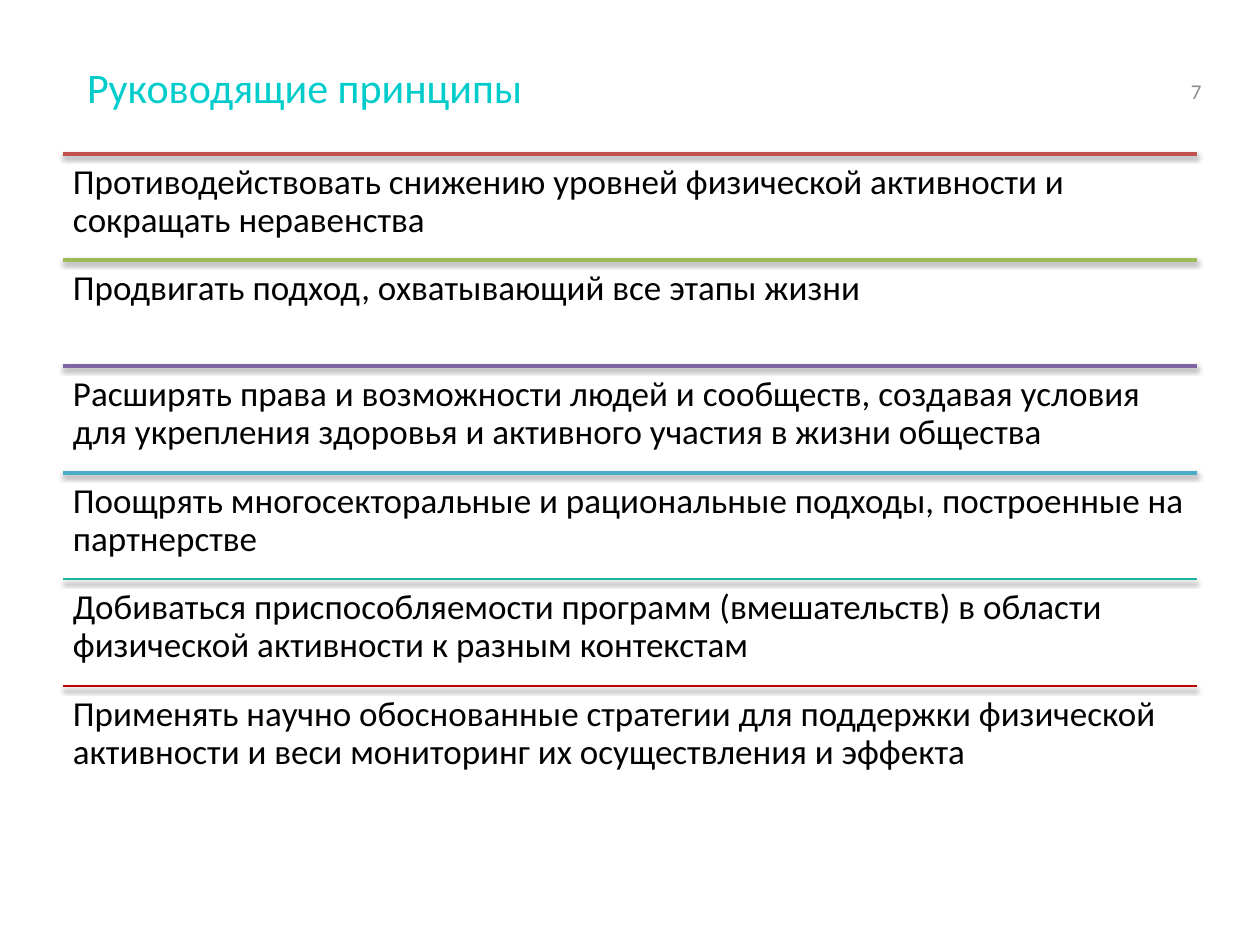
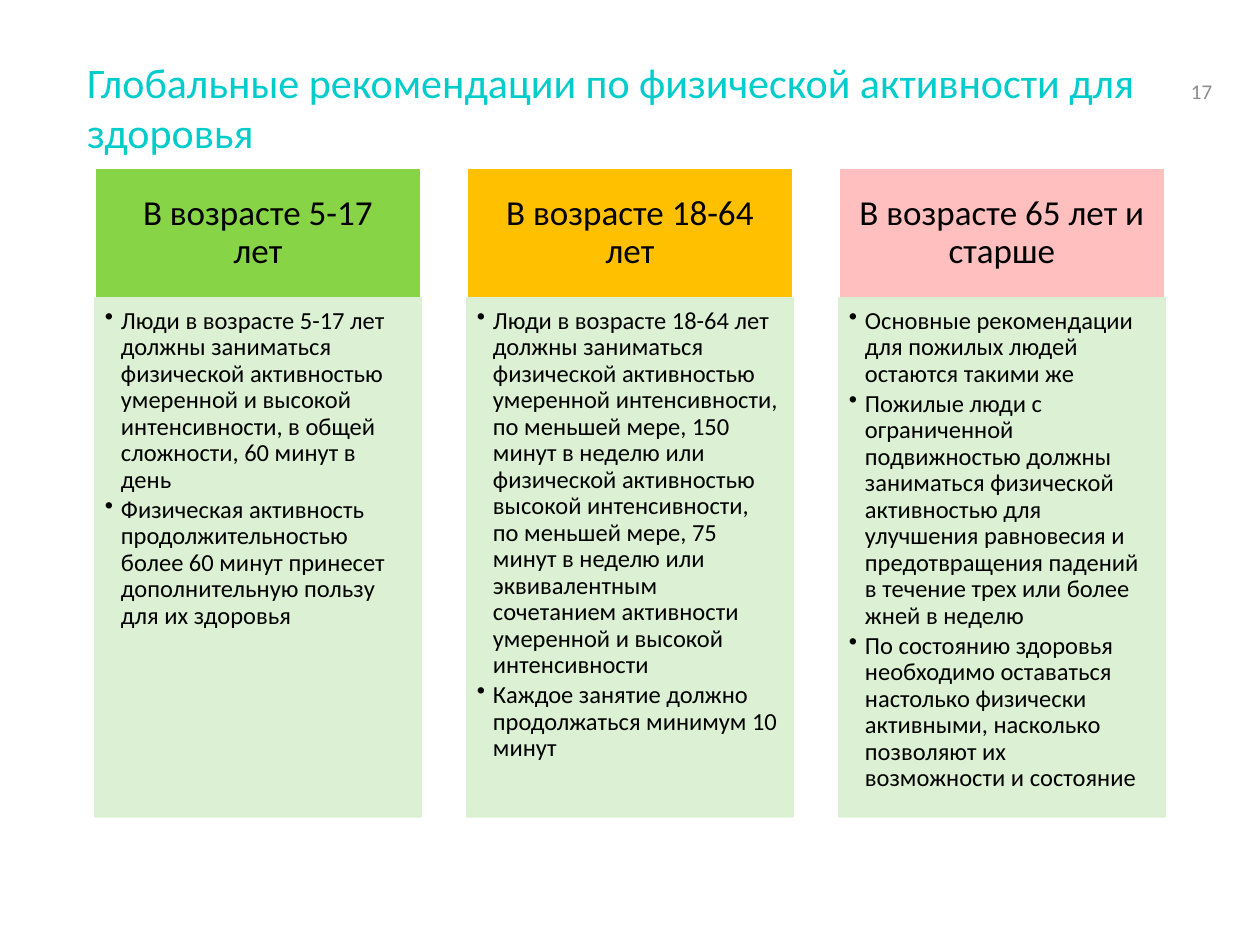
from lxml.etree import SubElement
from pptx import Presentation
from pptx.dml.color import RGBColor
from pptx.enum.shapes import MSO_CONNECTOR, MSO_SHAPE
from pptx.enum.text import MSO_ANCHOR, MSO_AUTO_SIZE, PP_ALIGN
from pptx.oxml.ns import qn
from pptx.util import Emu, Pt

COLORS = {
    "title": "00CCCC", "text": "000000", "number": "8C8C90", "white": "FFFFFF",
    "red": "C0504D", "olive": "9BBB59", "purple": "8064A2", "blue": "4BACC6",
    "teal": "1AB39F", "crimson": "C00000",
    "green": "87D447", "amber": "FFC000", "pink": "FFBFBF", "panel": "D9EFCF",
}
FONT = "Calibri"
PX = 914400 / 126
THICK = {"width": 2, "alpha": 38, "blur": 3.1, "dist": 1.6}
THIN = {"width": 1, "alpha": 50, "blur": 3, "dist": 2}

PRINCIPLES = [
    ("red", THICK, "Противодействовать снижению уровней физической активности и сокращать неравенства"),
    ("olive", THICK, "Продвигать подход, охватывающий все этапы жизни"),
    ("purple", THICK, "Расширять права и возможности людей и сообществ, создавая условия для укрепления "
                      "здоровья и активного участия в жизни общества"),
    ("blue", THICK, "Поощрять многосекторальные и рациональные подходы, построенные на партнерстве"),
    ("teal", THIN, "Добиваться приспособляемости программ (вмешательств) в области физической "
                   "активности к разным контекстам"),
    ("crimson", THIN, "Применять научно обоснованные стратегии для поддержки физической активности "
                      "и веси мониторинг их осуществления и эффекта"),
]

AGE_GROUPS = [
    ("green", "В возрасте 5-17 лет", [
        "Люди в возрасте 5-17 лет должны заниматься физической активностью умеренной и высокой "
        "интенсивности, в общей сложности, 60 минут в день",
        "Физическая активность продолжительностью более 60 минут принесет дополнительную пользу "
        "для их здоровья",
    ]),
    ("amber", "В возрасте 18-64 лет", [
        "Люди в возрасте 18-64 лет должны заниматься физической активностью умеренной "
        "интенсивности, по меньшей мере, 150 минут в неделю или физической активностью высокой "
        "интенсивности, по меньшей мере, 75 минут в неделю или эквивалентным сочетанием "
        "активности умеренной и высокой интенсивности",
        "Каждое занятие должно продолжаться минимум 10 минут",
    ]),
    ("pink", "В возрасте 65 лет и старше", [
        "Основные рекомендации для пожилых людей остаются такими же",
        "Пожилые люди с ограниченной подвижностью должны заниматься физической активностью для "
        "улучшения равновесия и предотвращения падений в течение трех или более жней в неделю",
        "По состоянию здоровья необходимо оставаться настолько физически активными, насколько "
        "позволяют их возможности и состояние",
    ]),
]


def px(n):
    return Emu(round(n * PX))


def rgb(name):
    return RGBColor.from_string(COLORS[name])


def write(sp, text, size=20, color="text", align=PP_ALIGN.LEFT, anchor=MSO_ANCHOR.TOP,
          insets=(10, 10, 10, 10), spacing=0.9, after=0, bullet=False):
    tf = sp.text_frame
    tf.word_wrap = True
    tf.auto_size = MSO_AUTO_SIZE.NONE
    tf.vertical_anchor = anchor
    tf.margin_left, tf.margin_top, tf.margin_right, tf.margin_bottom = map(px, insets)
    for i, line in enumerate([text] if isinstance(text, str) else text):
        p = tf.add_paragraph() if i else tf.paragraphs[0]
        p.alignment = align
        p.line_spacing = spacing
        p.space_after = Pt(after)
        if bullet:
            pPr = p._p.get_or_add_pPr()
            pPr.set("marL", str(px(16)))
            pPr.set("indent", str(-px(16)))
            SubElement(pPr, qn("a:buChar"), char="•")
        r = p.add_run()
        r.text = line
        r.font.name = FONT
        r.font.size = Pt(size)
        r.font.color.rgb = rgb(color)


class Deck:
    """Holds the shared style and the slide being built."""

    def __init__(self):
        self.prs = Presentation()
        self.prs.slide_width, self.prs.slide_height = px(1260), px(945)

    def slide(self, title, number, spacing=1.0):
        self.s = self.prs.slides.add_slide(self.prs.slide_layouts[5])
        sp = self.s.shapes.title
        sp.left, sp.top, sp.width, sp.height = map(px, (87, 50, 1086, 130))
        write(sp, title, size=24, color="title", insets=(0, 6, 0, 6), spacing=spacing)
        self.text(number, 1191, 50, 48, 59, size=12, color="number",
                  anchor=MSO_ANCHOR.BOTTOM, insets=(0, 5, 0, 5), spacing=1.0)

    def text(self, text, x, y, w, h, **fmt):
        write(self.s.shapes.add_textbox(*map(px, (x, y, w, h))), text, **fmt)

    def rule(self, x, y, w, color, width, alpha, blur, dist):
        sp = self.s.shapes.add_connector(MSO_CONNECTOR.STRAIGHT, *map(px, (x, y, x + w, y)))
        sp.line.color.rgb = rgb(color)
        sp.line.width = Pt(width)
        effects = SubElement(sp._element.spPr, qn("a:effectLst"))
        shadow = SubElement(effects, qn("a:outerShdw"), blurRad=str(Pt(blur)),
                            dist=str(Pt(dist)), dir="5400000", rotWithShape="0")
        clr = SubElement(shadow, qn("a:srgbClr"), val=COLORS["text"])
        SubElement(clr, qn("a:alpha"), val=str(alpha * 1000))

    def box(self, text, x, y, w, h, fill, line, alpha=100, **fmt):
        sp = self.s.shapes.add_shape(MSO_SHAPE.RECTANGLE, *map(px, (x, y, w, h)))
        sp.shadow.inherit = False
        sp.fill.solid()
        sp.fill.fore_color.rgb = rgb(fill)
        sp.line.color.rgb = rgb(line)
        sp.line.width = Pt(1)
        if alpha < 100:
            for clr in sp._element.spPr.iter(qn("a:srgbClr")):
                SubElement(clr, qn("a:alpha"), val=str(alpha * 1000))
        write(sp, text, **fmt)


def add_principles(deck):
    deck.slide("Руководящие принципы", "7", spacing=Pt(32))
    for i, (color, style, text) in enumerate(PRINCIPLES):
        y = 154 + i * 532 // 5
        deck.rule(63, y, 1134, color, **style)
        deck.text(text, 63, y, 1134, 106)


def add_recommendations(deck):
    deck.slide("Глобальные рекомендации по физической активности для здоровья", "17")
    for i, (color, age, advice) in enumerate(AGE_GROUPS):
        x = 95 + i * 372
        deck.box(age, x, 168, 326, 130, color, "white", align=PP_ALIGN.CENTER,
                 anchor=MSO_ANCHOR.MIDDLE, insets=(20, 11, 20, 11))
        deck.box(advice, x, 298, 326, 519, "panel", "panel", alpha=90, size=14,
                 insets=(10, 10, 14, 15), after=2, bullet=True)


def main():
    deck = Deck()
    add_principles(deck)
    add_recommendations(deck)
    deck.prs.save("out.pptx")


if __name__ == "__main__":
    main()
